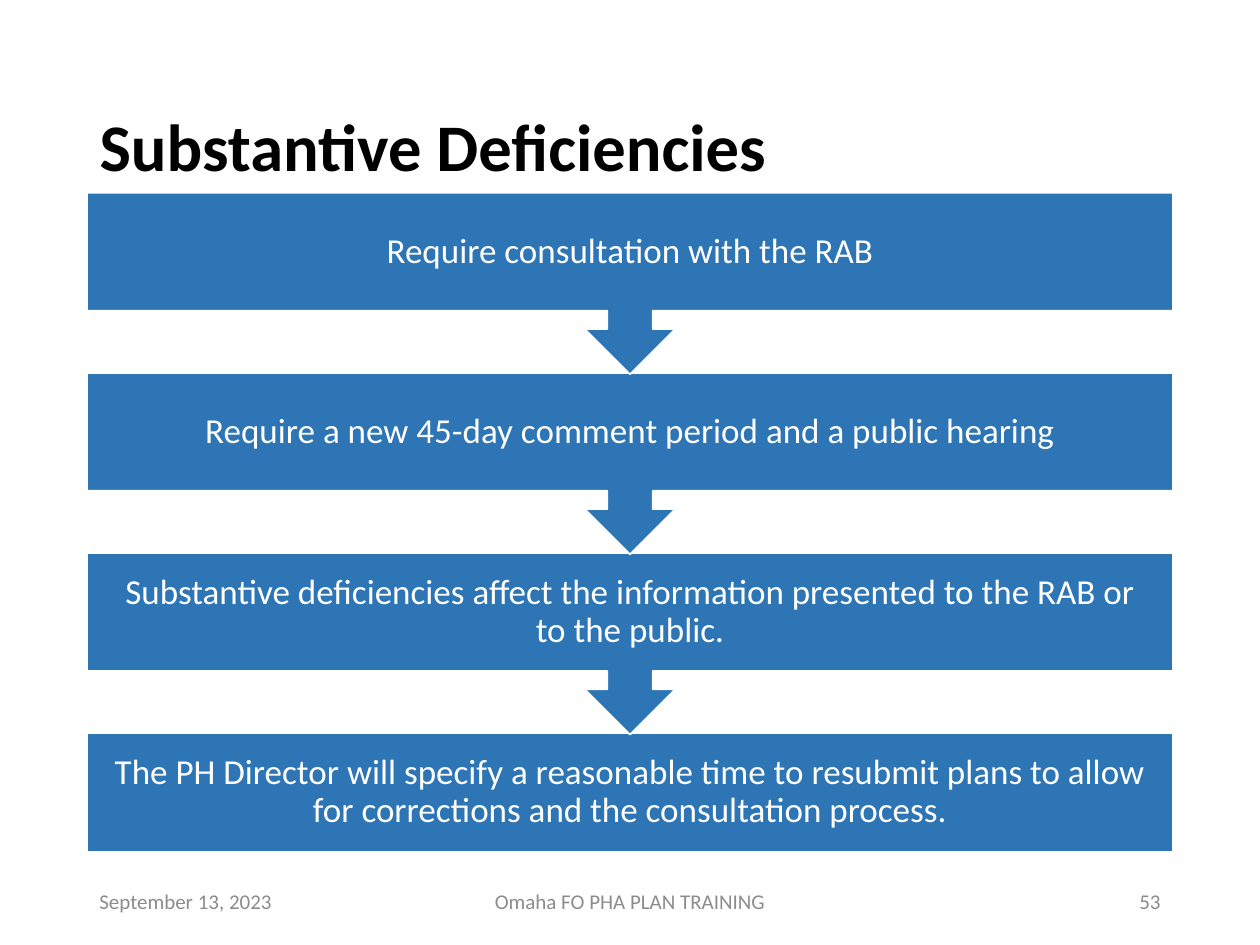
from pptx import Presentation
from pptx.dml.color import RGBColor
from pptx.enum.shapes import MSO_SHAPE
from pptx.enum.text import MSO_ANCHOR, MSO_AUTO_SIZE, PP_ALIGN
from pptx.util import Inches, Pt

COLORS = {"step": "2E75B6", "white": "FFFFFF", "title": "000000", "footer": "8C8C8C"}
FONT = "Calibri"
SLIDE_WIDTH, SLIDE_HEIGHT = 10, 7.5
MARGIN = 0.69
CONTENT_WIDTH = SLIDE_WIDTH - 2 * MARGIN
STEP_TOP, STEP_PITCH = 1.53, 1.43
BODY_HEIGHT, CALLOUT_HEIGHT = 0.94, 1.44
FOOTER_TOP, FOOTER_HEIGHT = 6.95, 0.4
SIDE_WIDTH, CENTER_WIDTH = 2.25, 3.38

STEPS = [
    "Require consultation with the RAB",
    "Require a new 45-day comment period and a public hearing",
    "Substantive deficiencies affect the information presented to the RAB or to the public.",
    "The PH Director will specify a reasonable time to resubmit plans to allow "
    "for corrections and the consultation process.",
]
FOOTERS = [
    ("September 13, 2023", MARGIN, SIDE_WIDTH, PP_ALIGN.LEFT),
    ("Omaha FO PHA PLAN TRAINING", (SLIDE_WIDTH - CENTER_WIDTH) / 2, CENTER_WIDTH, PP_ALIGN.CENTER),
    ("53", SLIDE_WIDTH - MARGIN - SIDE_WIDTH, SIDE_WIDTH, PP_ALIGN.RIGHT),
]


def color(name):
    return RGBColor.from_string(COLORS[name])


def write_text(shape, text, size, color_name, alignment, spacing=1.0, bold=False):
    frame = shape.text_frame
    frame.word_wrap = True
    frame.auto_size = MSO_AUTO_SIZE.NONE
    frame.vertical_anchor = MSO_ANCHOR.MIDDLE
    paragraph = frame.paragraphs[0]
    paragraph.alignment = alignment
    paragraph.line_spacing = spacing
    run = paragraph.add_run()
    run.text = text
    run.font.name = FONT
    run.font.size = Pt(size)
    run.font.bold = bold
    run.font.color.rgb = color(color_name)


def add_title(slide, text):
    title = slide.shapes.title
    title.left, title.top = Inches(MARGIN), Inches(0.63)
    title.width, title.height = Inches(CONTENT_WIDTH), Inches(1.12)
    write_text(title, text, 38, "title", PP_ALIGN.LEFT, 0.9, True)


def add_label(shapes, left, top, width, height, *text_format):
    label = shapes.add_textbox(Inches(left), Inches(top), Inches(width), Inches(height))
    write_text(label, *text_format)
    return label


def add_step(shapes, row, text, is_last):
    """Draw one band of the process; all but the last point to the next band."""
    top = STEP_TOP + row * STEP_PITCH
    kind = MSO_SHAPE.RECTANGLE if is_last else MSO_SHAPE.UP_ARROW_CALLOUT
    height = BODY_HEIGHT if is_last else CALLOUT_HEIGHT
    band = shapes.add_shape(kind, Inches(MARGIN), Inches(top), Inches(CONTENT_WIDTH), Inches(height))
    band.rotation = 0 if is_last else 180
    band.shadow.inherit = False
    band.fill.solid()
    band.fill.fore_color.rgb = color("step")
    band.line.color.rgb = color("white")
    band.line.width = Pt(1)

    label = add_label(shapes, MARGIN, top, CONTENT_WIDTH, BODY_HEIGHT,
                      text, 20, "white", PP_ALIGN.CENTER, 0.9)
    frame = label.text_frame
    frame.margin_left = frame.margin_right = Inches(0.16)
    frame.margin_top = frame.margin_bottom = Inches(0.16)


def add_process(slide, steps):
    """Stack the steps from the bottom up, so that each arrow lies over the next band."""
    group = slide.shapes.add_group_shape()
    last = len(steps) - 1
    for row in range(last, -1, -1):
        add_step(group.shapes, row, steps[row], row == last)


def add_footers(slide):
    for text, left, width, alignment in FOOTERS:
        add_label(slide.shapes, left, FOOTER_TOP, width, FOOTER_HEIGHT,
                  text, 12, "footer", alignment)


def main():
    presentation = Presentation()
    presentation.slide_width = Inches(SLIDE_WIDTH)
    presentation.slide_height = Inches(SLIDE_HEIGHT)
    slide = presentation.slides.add_slide(presentation.slide_layouts.get_by_name("Title Only"))
    add_title(slide, "Substantive Deficiencies")
    add_process(slide, STEPS)
    add_footers(slide)
    presentation.save("out.pptx")


if __name__ == "__main__":
    main()
